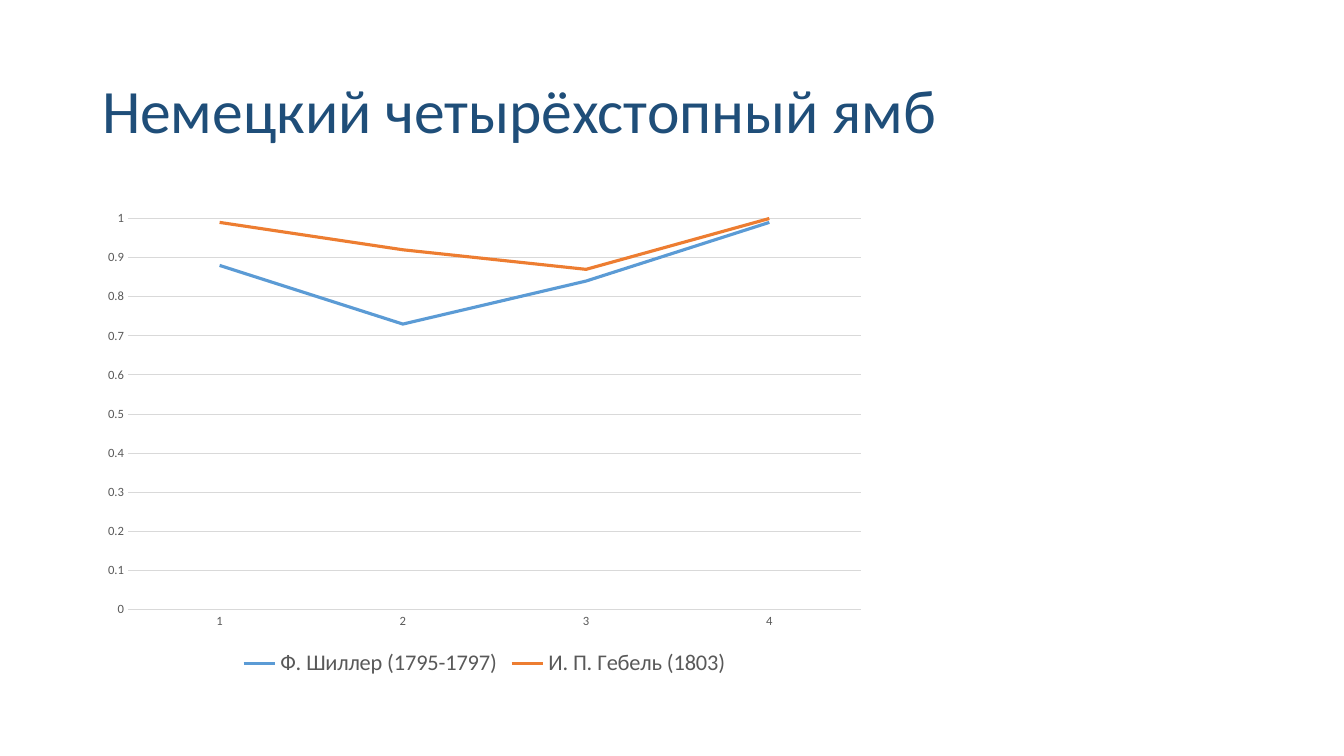
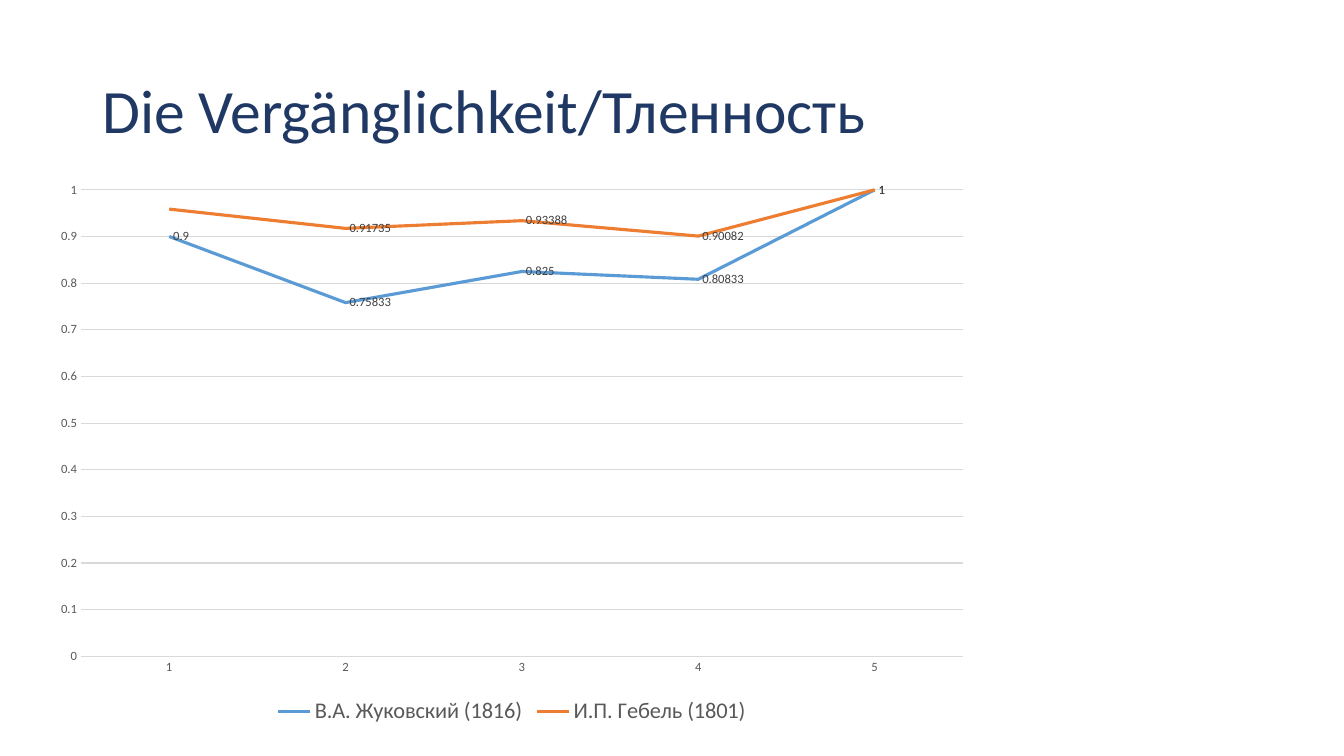
from dataclasses import dataclass

from pptx import Presentation
from pptx.chart.data import CategoryChartData
from pptx.dml.color import RGBColor
from pptx.enum.chart import XL_CHART_TYPE as ChartType
from pptx.enum.chart import XL_LABEL_POSITION as LabelPosition
from pptx.enum.chart import XL_LEGEND_POSITION as LegendPosition
from pptx.enum.chart import XL_TICK_MARK as TickMark
from pptx.enum.text import MSO_ANCHOR as Anchor
from pptx.util import Pt

FONT = "Calibri"
AXIS_TEXT = "595959"
LABEL_TEXT = "404040"
GRID = "D9D9D9"
SERIES_COLOURS = ("5B9BD5", "ED7D31")


@dataclass(frozen=True)
class Frame:
    left: float
    top: float
    width: float
    height: float

    def lengths(self) -> tuple:
        return Pt(self.left), Pt(self.top), Pt(self.width), Pt(self.height)


@dataclass(frozen=True)
class Poet:
    name: str
    stress: tuple
    labelled: tuple = ()


@dataclass(frozen=True)
class ChartPage:
    title: str
    title_colour: str
    frame: Frame
    poets: tuple


TITLE_FRAME = Frame(66, 28.8, 828, 104.4)

PAGES = (
    ChartPage(
        "Немецкий четырёхстопный ямб", "1F4E79", Frame(66, 144, 560.2, 342.7),
        (Poet("Ф. Шиллер (1795-1797)", (0.88, 0.73, 0.84, 0.99)),
         Poet("И. П. Гебель (1803)", (0.99, 0.92, 0.87, 1))),
    ),
    ChartPage(
        "Die Vergänglichkeit/Тленность", "203864", Frame(30.2, 122.4, 671, 398.9),
        (Poet("В.А. Жуковский (1816)", (0.9, 0.75833, 0.825, 0.80833, 1), (0, 1, 2, 3, 4)),
         Poet("И.П. Гебель (1801)", (0.95867, 0.91735, 0.93388, 0.90082, 1), (1, 2, 3, 4))),
    ),
)


def colour(value: str) -> RGBColor:
    return RGBColor.from_string(value)


def style_font(font, size: float, hex_colour: str) -> None:
    font.name = FONT
    font.size = Pt(size)
    font.color.rgb = colour(hex_colour)


def style_line(line, hex_colour: str, width: float) -> None:
    line.color.rgb = colour(hex_colour)
    line.width = Pt(width)


def add_text(page, text: str, frame: Frame, *, size: float, hex_colour: str,
             anchor=Anchor.MIDDLE, line_spacing: float = 0.9) -> None:
    box = page.shapes.add_textbox(*frame.lengths())
    box.text_frame.word_wrap = True
    box.text_frame.vertical_anchor = anchor
    para = box.text_frame.paragraphs[0]
    para.line_spacing = line_spacing
    span = para.add_run()
    span.text = text
    style_font(span.font, size, hex_colour)


def style_axes(chart) -> None:
    for axis in (chart.category_axis, chart.value_axis):
        axis.major_tick_mark = axis.minor_tick_mark = TickMark.NONE
        style_font(axis.tick_labels.font, 9, AXIS_TEXT)
    style_line(chart.category_axis.format.line, GRID, 0.75)
    values = chart.value_axis
    values.minimum_scale, values.maximum_scale, values.major_unit = 0, 1, 0.1
    values.format.line.fill.background()
    values.has_major_gridlines = True
    style_line(values.major_gridlines.format.line, GRID, 0.75)


def style_legend(chart) -> None:
    chart.has_legend = True
    chart.legend.position = LegendPosition.BOTTOM
    chart.legend.include_in_layout = False
    style_font(chart.legend.font, 16, AXIS_TEXT)


def style_series(series, poet: Poet, hex_colour: str) -> None:
    series.smooth = False
    style_line(series.format.line, hex_colour, 2.25)
    if poet.labelled:
        series.data_labels.show_value = False
    for index in poet.labelled:
        label = series.points[index].data_label
        style_font(label.font, 9, LABEL_TEXT)
        label.position = LabelPosition.RIGHT


def add_line_chart(page, frame: Frame, poets: tuple) -> None:
    data = CategoryChartData()
    data.categories = [str(foot + 1) for foot in range(len(poets[0].stress))]
    for poet in poets:
        data.add_series(poet.name, poet.stress)
    chart = page.shapes.add_chart(ChartType.LINE, *frame.lengths(), data).chart
    chart.has_title = False
    style_font(chart.font, 10, "000000")
    style_axes(chart)
    style_legend(chart)
    plot = chart.plots[0]
    plot.vary_by_categories = False
    for series, poet, hex_colour in zip(plot.series, poets, SERIES_COLOURS):
        style_series(series, poet, hex_colour)


def main() -> None:
    deck = Presentation()
    deck.slide_width, deck.slide_height = Pt(960), Pt(540)
    for content in PAGES:
        page = deck.slides.add_slide(deck.slide_layouts[6])
        add_text(page, content.title, TITLE_FRAME, size=44, hex_colour=content.title_colour)
        add_line_chart(page, content.frame, content.poets)
    deck.save("out.pptx")


if __name__ == "__main__":
    main()
